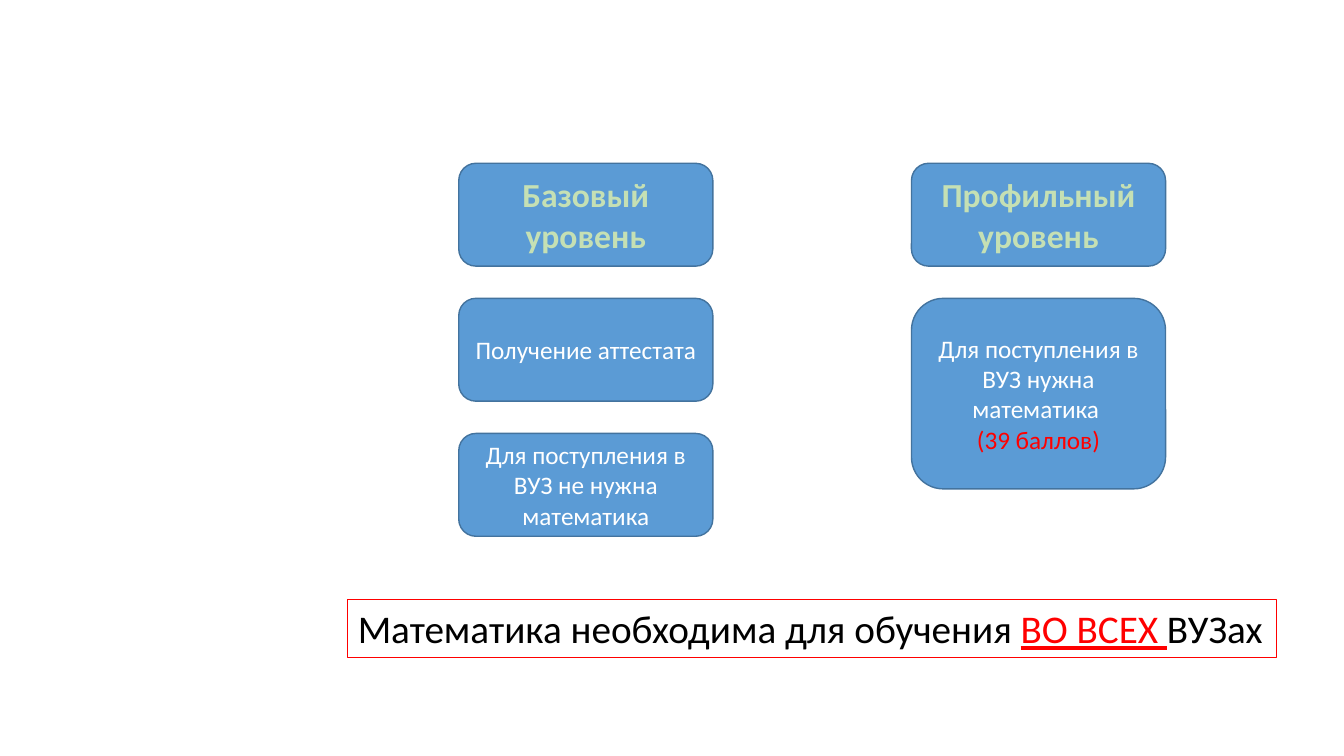
from pptx import Presentation
from pptx.dml.color import RGBColor
from pptx.enum.shapes import MSO_SHAPE as SHAPE
from pptx.enum.text import MSO_ANCHOR as ANCHOR, MSO_AUTO_SIZE as AUTO, PP_ALIGN as ALIGN
from pptx.util import Inches, Pt

BASIC_X, PROFILE_X = 4.55, 9.04
TOP, STEP = 1.62, 1.34
CARD_W, CARD_H = 2.52, 1.02


def rgb(value):
    return RGBColor.from_string(value)


def style(r, size, color, bold=False, underline=False):
    r.font.name = "Calibri"
    r.font.size = Pt(size)
    r.font.bold = bold
    r.font.underline = underline
    r.font.color.rgb = rgb(color)


def add_card(s, x, row, lines, size=18, bold=False, height=CARD_H):
    sp = s.shapes.add_shape(SHAPE.ROUNDED_RECTANGLE, Inches(x), Inches(TOP + row * STEP),
                            Inches(CARD_W), Inches(height))
    sp.shadow.inherit = False
    sp.fill.solid()
    sp.fill.fore_color.rgb = rgb("5B9BD5")
    sp.line.color.rgb = rgb("43739E")
    sp.line.width = Pt(1)
    tf = sp.text_frame
    tf.word_wrap = True
    tf.vertical_anchor = ANCHOR.MIDDLE
    tf.text = "\n".join(text for text, color in lines)
    for p, (text, color) in zip(tf.paragraphs, lines):
        p.alignment = ALIGN.CENTER
        style(p.runs[0], size, color, bold)


def add_heading(s, x, text):
    add_card(s, x, 0, [(text, "C5E0B4")], size=24, bold=True)


def add_conclusion(s, parts):
    sp = s.shapes.add_textbox(Inches(3.45), Inches(5.95), Inches(9.21), Inches(0.57))
    sp.line.color.rgb = rgb("FF0000")
    sp.line.width = Pt(0.75)
    tf = sp.text_frame
    tf.word_wrap = True
    tf.auto_size = AUTO.SHAPE_TO_FIT_TEXT
    for text, color, underline in parts:
        r = tf.paragraphs[0].add_run()
        r.text = text
        style(r, 28, color, underline=underline)


def main():
    prs = Presentation()
    prs.slide_width, prs.slide_height = Inches(13.33), Inches(7.5)
    s = prs.slides.add_slide(prs.slide_layouts[6])
    add_heading(s, BASIC_X, "Базовый уровень")
    add_heading(s, PROFILE_X, "Профильный уровень")
    add_card(s, BASIC_X, 1, [("Получение аттестата", "FFFFFF")])
    add_card(s, BASIC_X, 2, [("Для поступления в ВУЗ не нужна математика", "FFFFFF")])
    add_card(s, PROFILE_X, 1, [("Для поступления в ВУЗ нужна математика ", "FFFFFF"),
                               ("(39 баллов)", "FF0000")], height=1.89)
    add_conclusion(s, [("Математика необходима для обучения ", "000000", False),
                       ("ВО ВСЕХ ", "FF0000", True),
                       ("ВУЗах", "000000", False)])
    prs.save("out.pptx")


if __name__ == "__main__":
    main()
